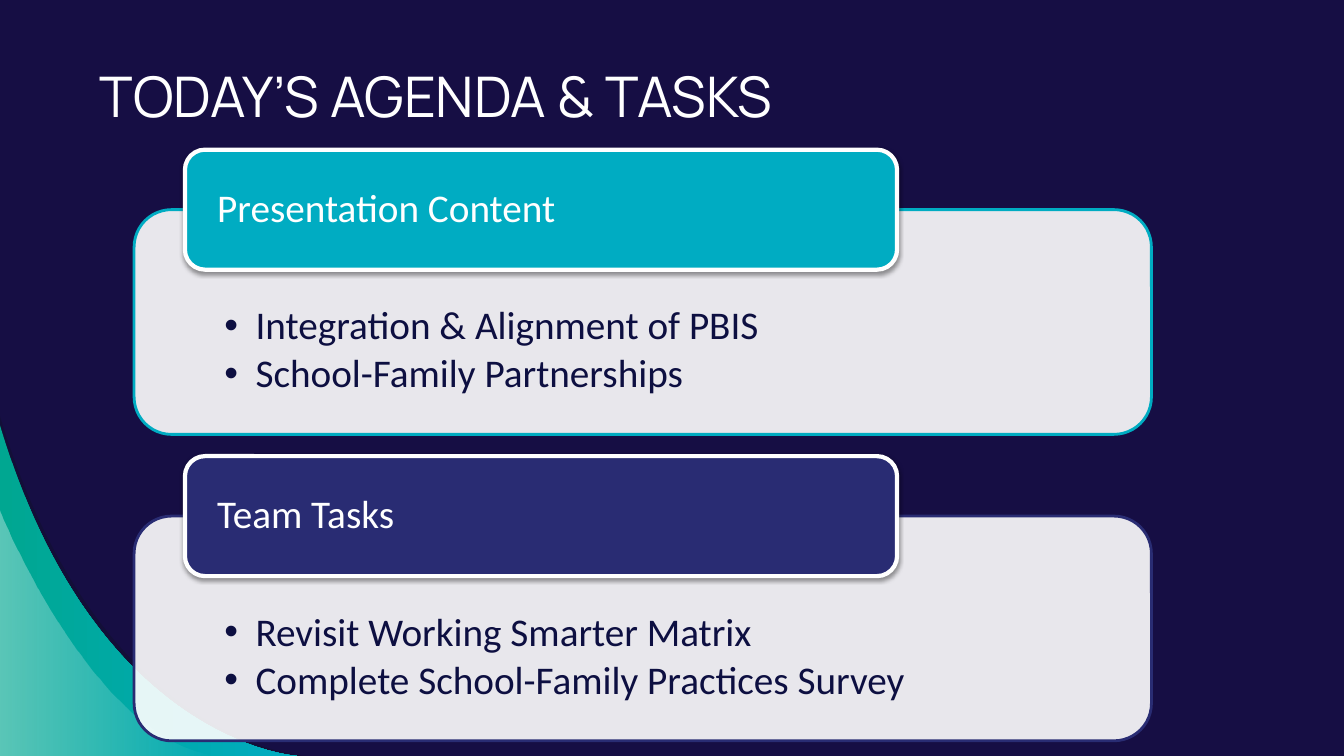
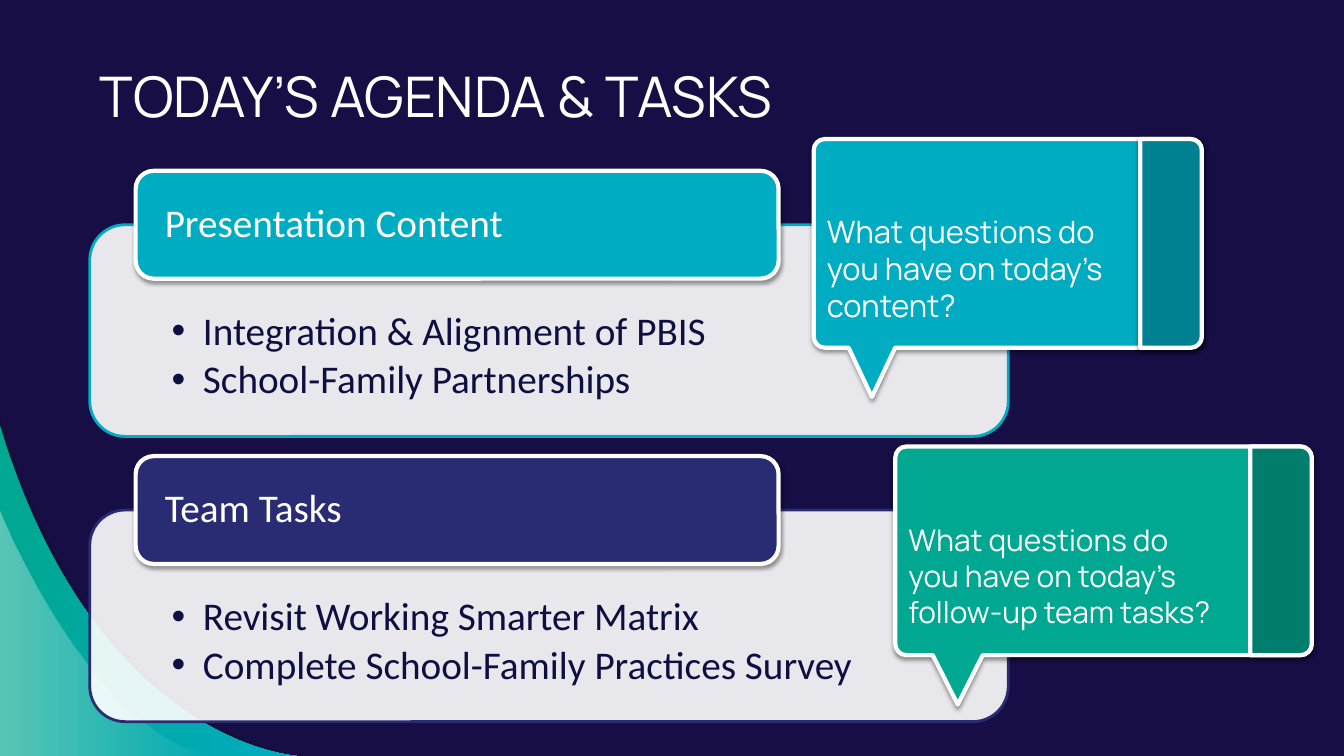
from lxml.etree import SubElement as Sub
from pptx import Presentation
from pptx.dml.color import RGBColor as RGB
from pptx.enum.shapes import MSO_SHAPE as Kind
from pptx.enum.text import MSO_ANCHOR as Anchor, PP_ALIGN as Align
from pptx.oxml.ns import qn
from pptx.util import Inches, Pt

NIGHT = RGB(0x16, 0x0E, 0x44)
SHADE = RGB(0x12, 0x10, 0x2F)
INK = RGB(0x0D, 0x0F, 0x41)
WHITE = RGB(0xFF, 0xFF, 0xFF)
BLACK = RGB(0x00, 0x00, 0x00)
CYAN = RGB(0x00, 0xAC, 0xC2)
TEAL = RGB(0x00, 0x81, 0x92)
GREEN = RGB(0x00, 0xA7, 0x91)
PINE = RGB(0x00, 0x7D, 0x6D)
NAVY = RGB(0x29, 0x2C, 0x73)
HEAD = "Manrope"
BODY = "Calibri"

TITLE = "TODAY’S AGENDA & TASKS"
CARDS = [
    ("Presentation Content", CYAN,
     ["Integration & Alignment of PBIS", "School-Family Partnerships"]),
    ("Team Tasks", NAVY,
     ["Revisit Working Smarter Matrix",
      "Complete School-Family Practices Survey"]),
]
ASK = ["What questions do", "you have on today’s"]


def trace(slide, start, *legs):
    pen = slide.shapes.build_freeform(Inches(start[0]), Inches(start[1]))
    pen.add_line_segments([(Inches(x), Inches(y))
                           for leg in legs for x, y in leg])
    shape = pen.convert_to_shape()
    lines = iter(list(shape.element.iter(qn("a:lnTo"))))
    for leg in legs:
        group = [next(lines) for _ in leg]
        if len(leg) == 3:
            first, *rest = group
            first.tag = qn("a:cubicBezTo")
            for line in rest:
                first.append(line[0])
                line.getparent().remove(line)
    return shape


def fade(shape, *parts):
    for clr, part in zip(shape.element.iter(qn("a:srgbClr")), parts):
        Sub(clr, qn("a:alpha"), val=str(part * 1000))


def paint(shape, fill, line=None, width=3):
    shape.shadow.inherit = False
    if isinstance(fill, list):
        shape.fill.gradient()
        shape.fill.gradient_angle = 0
        for stop, clr in zip(shape.fill.gradient_stops, fill):
            stop.color.rgb = clr
    else:
        shape.fill.solid()
        shape.fill.fore_color.rgb = fill
    if line is None:
        shape.line.fill.background()
    else:
        shape.line.color.rgb = line
        shape.line.width = Pt(width)


def lift(shape):
    glow = next(shape.element.iter(qn("a:effectLst")))
    drop = Sub(glow, qn("a:outerShdw"), blurRad=str(Pt(3.1)),
               dist=str(Pt(1.6)), dir="5400000", rotWithShape="0")
    clr = Sub(drop, qn("a:srgbClr"), val=str(BLACK))
    Sub(clr, qn("a:alpha"), val="38000")


def frame(shape, anchor, left, top, right, low):
    tf = shape.text_frame
    tf.word_wrap = True
    tf.vertical_anchor = anchor
    tf.margin_left, tf.margin_top = Inches(left), Inches(top)
    tf.margin_right, tf.margin_bottom = Inches(right), Inches(low)
    return tf


def write(tf, lines, font, size, clr, space=None, dots=False):
    for i, line in enumerate(lines):
        para = tf.add_paragraph() if i else tf.paragraphs[0]
        para.alignment = Align.LEFT
        if space:
            para.line_spacing = space
        if dots:
            para.space_after = Pt(4.2)
            props = para._p.get_or_add_pPr()
            props.set("marL", str(Inches(0.31)))
            props.set("indent", str(Inches(-0.31)))
            Sub(props, qn("a:buFont"), typeface="Arial")
            Sub(props, qn("a:buChar"), char="•")
        run = para.add_run()
        run.text = line
        run.font.name = font
        run.font.size = Pt(size)
        run.font.color.rgb = clr


def block(slide, x, y, w, h):
    return slide.shapes.add_shape(Kind.ROUNDED_RECTANGLE, Inches(x),
                                  Inches(y), Inches(w), Inches(h))


def card(slide, box, tall, name, clr, items):
    x, y, w, h = box
    body = block(slide, x, y, w, h)
    paint(body, WHITE, clr, 2)
    fade(body, 90)
    side = w * 0.078
    tf = frame(body, Anchor.TOP, side, tall * 0.71, side, 0.22)
    write(tf, items, BODY, 28, INK, 0.9, True)
    tab = block(slide, x + w * 0.05, y - tall / 2, w * 0.7, tall)
    paint(tab, clr, WHITE)
    lift(tab)
    side = w * 0.026
    tf = frame(tab, Anchor.MIDDLE, side, 0, side, 0)
    write(tf, [name], BODY, 28, WHITE, 0.9)


def stack(slide, box, tall, step):
    x, y, w, h = box
    for i, (name, clr, items) in enumerate(CARDS):
        card(slide, (x, y + i * step, w, h), tall, name, clr, items)


def bubble(slide, box, clr, dark, lines, size):
    x, y, w, h = box
    r, k, far, low = 0.11, 0.05, x + w, y + h
    edge = [
        [(far - k, y), (far, y + k), (far, y + r)],
        [(far, low - r)],
        [(far, low - k), (far - k, low), (far - r, low)],
    ]
    note = trace(
        slide, (far - r, y), *edge,
        [(x + w * 0.21, low)], [(x + w * 0.15, low + 0.49)],
        [(x + w * 0.09, low)], [(x + r, low)],
        [(x + k, low), (x, low - k), (x, low - r)], [(x, y + r)],
        [(x, y + k), (x + k, y), (x + r, y)])
    paint(note, clr, WHITE)
    lift(note)
    tf = frame(note, Anchor.MIDDLE, 0.13, 0.13, 0.13, 0.13)
    write(tf, lines, HEAD, size, WHITE)
    cut = far - 0.61
    strip = trace(slide, (far - r, y), *edge, [(cut, low)], [(cut, y)])
    paint(strip, dark, WHITE)
    return strip


def waves(slide):
    back = trace(slide, (0, 4.13), [(0.98, 7.39), (3.03, 7.5), (3.03, 7.5)],
                 [(0, 7.5)])
    paint(back, SHADE)
    fade(back, 54)
    mid = trace(slide, (2.95, 7.5), [(2.95, 7.5), (0.95, 7.39), (0, 4.22)],
                [(0, 7.5)])
    paint(mid, [GREEN, CYAN])
    front = trace(slide, (0, 5.06), [(0, 5.06), (0.91, 7.35), (2.16, 7.5)],
                  [(0, 7.5)])
    paint(front, [WHITE, WHITE])
    fade(front, 36, 0)
    return back, mid, front


def theme(deck):
    back = deck.slide_master.background.fill
    back.solid()
    back.fore_color.rgb = NIGHT
    base = deck.slide_layouts[5]
    for item in list(base.placeholders):
        if item.placeholder_format.idx:
            item.element.getparent().remove(item.element)
        else:
            item.left, item.top = Inches(0.89), Inches(0.51)
            item.width, item.height = Inches(10.26), Inches(0.92)
            frame(item, Anchor.TOP, 0.1, 0.1, 0.1, 0.1)
    return base


def page(deck, base):
    slide = deck.slides.add_slide(base)
    write(slide.shapes.title.text_frame, [TITLE], HEAD, 40, WHITE)
    return slide


def main():
    deck = Presentation()
    deck.slide_width, deck.slide_height = Inches(13.33), Inches(7.5)
    base = theme(deck)
    plan = page(deck, base)
    for wave in waves(plan):
        base.shapes.element.append(wave.element)
    stack(plan, (1.33, 2.08, 10.09, 2.23), 1.19, 3.04)

    talk = page(deck, base)
    stack(talk, (0.89, 2.23, 9.11, 2.1), 1.07, 2.83)
    bubble(talk, (8.88, 4.43, 4.13, 2.07), GREEN, PINE,
           ASK + ["follow-up team tasks?"], 21.33)
    strip = bubble(talk, (8.07, 1.38, 3.85, 2.07), CYAN, TEAL,
                   ASK + ["content?"], 22)
    lift(strip)
    deck.save("out.pptx")


if __name__ == "__main__":
    main()
